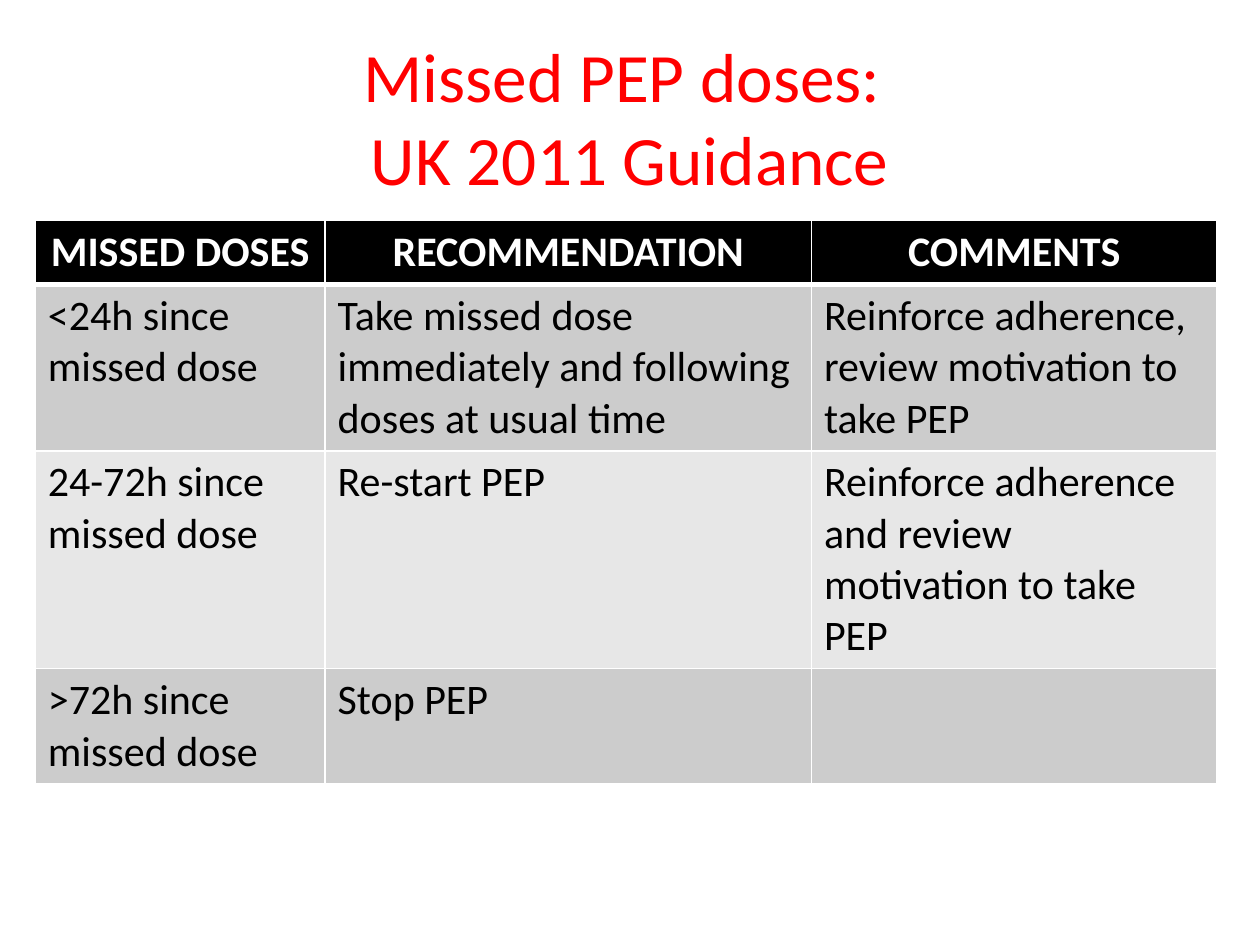
"""Build a slide with a table of guidance on missed PEP doses."""
from lxml import etree
from pptx import Presentation
from pptx import util as u
from pptx.dml.color import RGBColor
from pptx.enum import text
from pptx.oxml.ns import qn

TITLE = "Missed PEP doses: \vUK 2011 Guidance"
ROWS = [
    ("MISSED DOSES", "RECOMMENDATION", "COMMENTS"),
    ("<24h since missed dose",
     "Take missed dose immediately and following doses at usual time",
     "Reinforce adherence, review motivation to take PEP"),
    ("24-72h since missed dose", "Re-start PEP",
     "Reinforce adherence and review motivation to take PEP"),
    (">72h since missed dose", "Stop PEP", ""),
]
COLUMN_WIDTHS = [2.3, 3.86, 3.22]
ROW_HEIGHTS = [0.5, 1.32, 1.73, 0.91]
COLORS = {"title": "FF0000", "header": "000000", "header_text": "FFFFFF",
          "odd": "CCCCCC", "even": "E7E7E7", "body_text": "000000",
          "border": "FFFFFF"}
TITLE_FONT = {"name": "Calibri", "size": u.Pt(39.6), "bold": False}
HEADER_FONT = {"name": "Calibri", "size": u.Pt(24), "bold": True}
BODY_FONT = {**HEADER_FONT, "bold": False}


def format_paragraph(paragraph, font_values, color, alignment):
    """Apply font values, colour and alignment to a paragraph."""
    paragraph.alignment = alignment
    for run in paragraph.runs:
        for name, value in font_values.items():
            setattr(run.font, name, value)
        run.font.color.rgb = RGBColor.from_string(COLORS[color])


def add_borders(cell, widths):
    """Put solid borders, given in points by side, ahead of the cell fill."""
    properties = cell._tc.get_or_add_tcPr()
    for position, (side, width) in enumerate(widths.items()):
        line = etree.Element(qn(f"a:ln{side}"), w=str(u.Pt(width)))
        fill = etree.SubElement(line, qn("a:solidFill"))
        etree.SubElement(fill, qn("a:srgbClr"), val=COLORS["border"])
        properties.insert(position, line)


def add_title(slide):
    """Place and format the title."""
    title = slide.shapes.title
    places = {"left": 0.5, "top": 0.3, "width": 9, "height": 1.25}
    for name, value in places.items():
        setattr(title, name, u.Inches(value))
    frame = title.text_frame
    frame.text = TITLE
    frame.auto_size = text.MSO_AUTO_SIZE.NONE
    frame.vertical_anchor = text.MSO_ANCHOR.MIDDLE
    format_paragraph(frame.paragraphs[0], TITLE_FONT, "title", text.PP_ALIGN.CENTER)


def add_guidance_table(slide):
    """Add the table with a dark header and banded rows."""
    table = slide.shapes.add_table(
        len(ROWS), len(COLUMN_WIDTHS), u.Inches(0.28), u.Inches(1.75),
        u.Inches(sum(COLUMN_WIDTHS)), u.Inches(sum(ROW_HEIGHTS))).table
    for column, width in zip(table.columns, COLUMN_WIDTHS):
        column.width = u.Inches(width)
    for row, height in zip(table.rows, ROW_HEIGHTS):
        row.height = u.Inches(height)
    for row_index, values in enumerate(ROWS):
        if row_index == 0:
            fill, style = "header", (HEADER_FONT, "header_text", text.PP_ALIGN.CENTER)
        else:
            fill = "odd" if row_index % 2 else "even"
            style = (BODY_FONT, "body_text", text.PP_ALIGN.LEFT)
        widths = {"L": 1, "R": 1, "T": 3 if row_index == 1 else 1,
                  "B": 3 if row_index == 0 else 1}
        for column_index, value in enumerate(values):
            cell = table.cell(row_index, column_index)
            cell.text = value
            cell.fill.solid()
            cell.fill.fore_color.rgb = RGBColor.from_string(COLORS[fill])
            format_paragraph(cell.text_frame.paragraphs[0], *style)
            add_borders(cell, widths)


def main():
    """Build and save the presentation."""
    presentation = Presentation()
    presentation.slide_width, presentation.slide_height = u.Inches(10), u.Inches(7.5)
    slide = presentation.slides.add_slide(presentation.slide_layouts[5])
    add_title(slide)
    add_guidance_table(slide)
    presentation.save("out.pptx")


if __name__ == "__main__":
    main()
